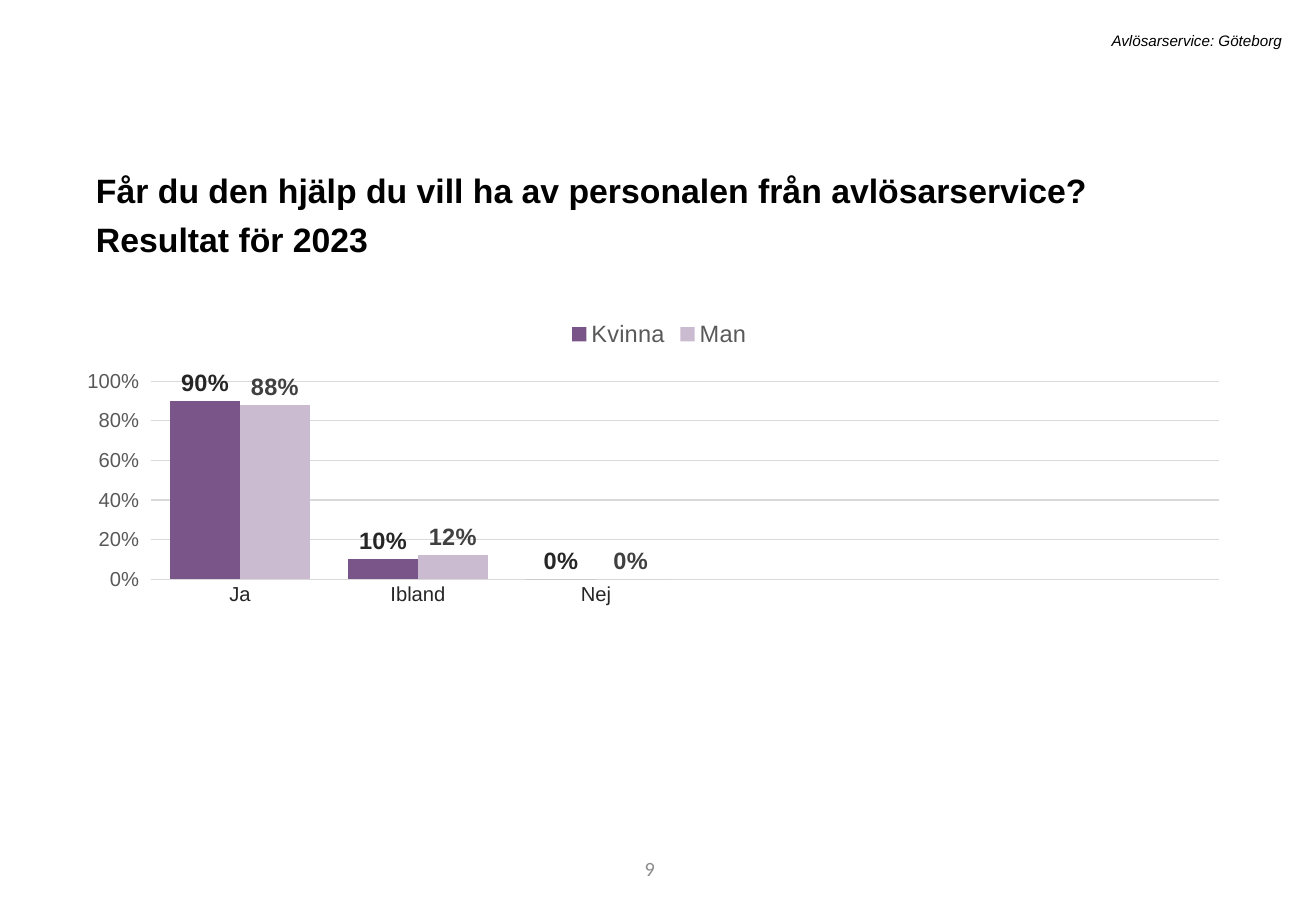
from dataclasses import dataclass

import pptx
import pptx.chart.data
import pptx.dml.color
import pptx.enum.chart
import pptx.enum.text
import pptx.oxml
import pptx.oxml.ns
import pptx.util

Pt = pptx.util.Pt
ALIGN = pptx.enum.text.PP_ALIGN
ANCHOR = pptx.enum.text.MSO_ANCHOR
AUTO_SIZE = pptx.enum.text.MSO_AUTO_SIZE
CHART = pptx.enum.chart


@dataclass(frozen=True)
class Theme:
    font: str = "Arial"
    number_font: str = "Calibri"
    black: str = "000000"
    dark: str = "262626"
    label: str = "404040"
    grey: str = "595959"
    pale: str = "8C8C8C"
    grid: str = "D9D9D9"
    women: str = "7A5589"
    men: str = "CABBD0"
    title_size: int = 20
    legend_size: int = 14
    axis_size: int = 12
    chart_size: int = 10
    header_size: int = 9


THEME = Theme()


class SlideBuilder:
    def __init__(self, prs, theme):
        self.theme = theme
        self.s = prs.slides.add_slide(prs.slide_layouts[5])

    def style(self, font, size, color, bold=False, italic=False, name=None):
        font.name = name or self.theme.font
        font.size = Pt(size)
        font.bold = bold
        font.italic = italic
        font.color.rgb = pptx.dml.color.RGBColor.from_string(color)

    def fill_text(self, sp, text, align, anchor, auto_size, **style):
        tf = sp.text_frame
        tf.text = text
        tf.word_wrap = True
        tf.auto_size = auto_size
        tf.vertical_anchor = anchor
        p = tf.paragraphs[0]
        p.alignment = align
        self.style(p.runs[0].font, **style)
        return p

    def title(self, text, left, top, width, height):
        sp = self.s.shapes.title
        sp.left, sp.top, sp.width, sp.height = map(Pt, (left, top, width, height))
        p = self.fill_text(sp, text, ALIGN.LEFT, ANCHOR.TOP, AUTO_SIZE.SHAPE_TO_FIT_TEXT,
                           size=self.theme.title_size, color=self.theme.black, bold=True)
        p.line_spacing = 1.2
        p.space_before = Pt(10)

    def text(self, text, left, top, width, height, align=ALIGN.RIGHT,
             anchor=ANCHOR.TOP, auto_size=AUTO_SIZE.SHAPE_TO_FIT_TEXT, **style):
        sp = self.s.shapes.add_textbox(*map(Pt, (left, top, width, height)))
        self.fill_text(sp, text, align, anchor, auto_size, **style)

    def line(self, line):
        line.width = Pt(0.75)
        line.color.rgb = pptx.dml.color.RGBColor.from_string(self.theme.grid)

    def column_chart(self, categories, series, left, top, width, height, plot_area):
        """Draw percentage columns; series holds (name, values, fill, label colour)."""
        t = self.theme
        data = pptx.chart.data.CategoryChartData(number_format="0%")
        data.categories = categories
        for name, values, _, _ in series:
            data.add_series(name, values)
        chart = self.s.shapes.add_chart(
            CHART.XL_CHART_TYPE.COLUMN_CLUSTERED,
            *map(Pt, (left, top, width, height)), data).chart
        self.style(chart.font, t.chart_size, t.black)
        chart.has_title = False
        chart.has_legend = True
        chart.legend.position = CHART.XL_LEGEND_POSITION.TOP
        chart.legend.include_in_layout = False
        self.style(chart.legend.font, t.legend_size, t.grey)

        plot = chart.plots[0]
        plot.gap_width = 55
        plot.vary_by_categories = False
        for ser, (_, _, fill, label_color) in zip(plot.series, series):
            ser.format.fill.solid()
            ser.format.fill.fore_color.rgb = pptx.dml.color.RGBColor.from_string(fill)
            labels = ser.data_labels
            labels.show_value = True
            labels.position = CHART.XL_LABEL_POSITION.OUTSIDE_END
            labels.number_format = "0%"
            labels.number_format_is_linked = False
            self.style(labels.font, t.legend_size, label_color, bold=True)

        cat = chart.category_axis
        cat.major_tick_mark = CHART.XL_TICK_MARK.NONE
        self.style(cat.tick_labels.font, t.axis_size, t.dark)
        self.line(cat.format.line)

        val = chart.value_axis
        val.minimum_scale, val.maximum_scale, val.major_unit = 0, 1, 0.2
        val.major_tick_mark = CHART.XL_TICK_MARK.OUTSIDE
        val.tick_labels.number_format = "0%"
        val.tick_labels.number_format_is_linked = False
        self.style(val.tick_labels.font, t.axis_size, t.grey)
        val.format.line.fill.background()
        val.has_major_gridlines = True
        self.line(val.major_gridlines.format.line)
        self.place_plot(chart, plot_area)

    def place_plot(self, chart, plot_area):
        """Fix the inner plot area as fractions of the chart: x, y, w, h."""
        qn = pptx.oxml.ns.qn
        area = chart.plots[0]._element.getparent()
        for old in area.findall(qn("c:layout")):
            area.remove(old)
        modes = "".join(f'<c:{k}Mode val="edge"/>' for k in "xy")
        sizes = "".join(f'<c:{k} val="{v}"/>' for k, v in zip("xywh", plot_area))
        area.insert(0, pptx.oxml.parse_xml(
            f'<c:layout {pptx.oxml.ns.nsdecls("c")}><c:manualLayout>'
            f'<c:layoutTarget val="inner"/>{modes}{sizes}'
            '</c:manualLayout></c:layout>'))


def main():
    prs = pptx.Presentation()
    prs.slide_width, prs.slide_height = Pt(780), Pt(540)
    b = SlideBuilder(prs, THEME)
    b.text("9", 219.6, 500.4, 175.7, 28.8, anchor=ANCHOR.MIDDLE,
           auto_size=AUTO_SIZE.NONE, size=THEME.axis_size, color=THEME.pale,
           name=THEME.number_font)
    b.column_chart(
        ["Ja", "Ibland", "Nej", "", "", ""],
        [("Kvinna", [0.9, 0.1, 0], THEME.women, THEME.dark),
         ("Man", [0.88, 0.12, 0], THEME.men, THEME.label)],
        51.8, 182.2, 676.8, 284.4, plot_area=(0.054, 0.154, 0.937, 0.413))
    b.title("Får du den hjälp du vill ha av personalen från avlösarservice? "
            "Resultat för 2023", 49.7, 92.2, 676.8, 33.8)
    b.text("Avlösarservice: Göteborg", 128.9, 15.1, 637.9, 18,
           size=THEME.header_size, color=THEME.black, italic=True)
    prs.save("out.pptx")


if __name__ == "__main__":
    main()
